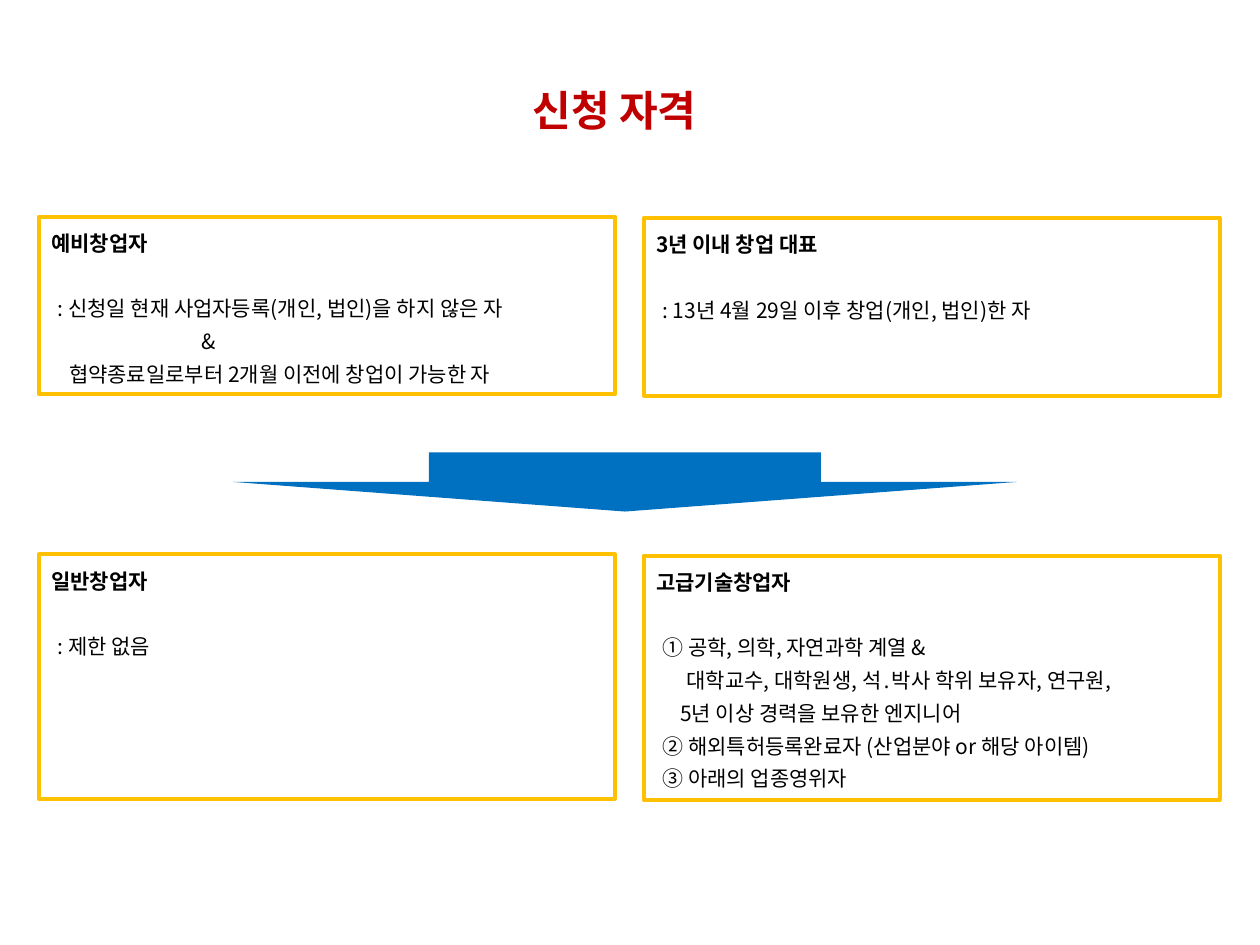
from dataclasses import dataclass

from pptx import Presentation
from pptx.dml.color import RGBColor
from pptx.enum.shapes import MSO_SHAPE
from pptx.enum.text import MSO_ANCHOR, PP_ALIGN
from pptx.oxml.ns import qn
from pptx.util import Inches, Pt

RECTANGLE = MSO_SHAPE.RECTANGLE
DOWN_ARROW = MSO_SHAPE.DOWN_ARROW
TOP, MIDDLE = MSO_ANCHOR.TOP, MSO_ANCHOR.MIDDLE
LEFT, CENTER = PP_ALIGN.LEFT, PP_ALIGN.CENTER

FONT = "Noto Sans CJK KR"
RED, AMBER, BLUE, BLACK = "C00000", "FFC000", "0070C0", "000000"
LINE_PITCH = Pt(18.7)
TITLE_FORMAT = {"name": FONT, "size": Pt(24), "bold": True}
HEADING_FORMAT = {"name": FONT, "size": Pt(12), "bold": True}
BODY_FORMAT = {**HEADING_FORMAT, "bold": False}

# Card grid: the right column sits slightly lower than the left one
CARD_WIDTH = 4.57
COLUMN_LEFT = 0.31
COLUMN_STEP = 4.8
COLUMN_DROP = 0.01
ROW_TOPS = (1.72, 4.4)
ROW_HEIGHTS = (1.41, 1.94)


@dataclass(frozen=True)
class Line:
    text: str
    indent: float = 0.05


@dataclass(frozen=True)
class Card:
    row: int
    column: int
    heading: str
    lines: tuple[Line, ...]


CARDS = (
    Card(0, 0, "예비창업자", (
        Line(": 신청일 현재 사업자등록(개인, 법인)을 하지 않은 자"),
        Line("&", 1.19),
        Line("협약종료일로부터 2개월 이전에 창업이 가능한 자", 0.14),
    )),
    Card(0, 1, "3년 이내 창업 대표", (
        Line(": 13년 4월 29일 이후 창업(개인, 법인)한 자"),
    )),
    Card(1, 0, "일반창업자", (Line(": 제한 없음"),)),
    Card(1, 1, "고급기술창업자", (
        Line("① 공학, 의학, 자연과학 계열 &"),
        Line("대학교수, 대학원생, 석․박사 학위 보유자, 연구원,", 0.24),
        Line("5년 이상 경력을 보유한 엔지니어", 0.19),
        Line("② 해외특허등록완료자 (산업분야 or 해당 아이템)"),
        Line("③ 아래의 업종영위자"),
    )),
)


def rgb(color: str) -> RGBColor:
    return RGBColor.from_string(color)


def write(paragraph, text: str, font_format: dict, color: str) -> None:
    run = paragraph.add_run()
    run.text = text
    for attribute, value in font_format.items():
        setattr(run.font, attribute, value)
    run.font.color.rgb = rgb(color)
    # Hangul takes the East Asian typeface
    east_asian = run.font._element.makeelement(qn("a:ea"), {"typeface": FONT})
    run.font._element.find(qn("a:latin")).addnext(east_asian)


def add_title(slide, text: str) -> None:
    title = slide.shapes.title
    title.left, title.top = Inches(2.24), Inches(0.62)
    title.width, title.height = Inches(5.35), Inches(0.5)
    title.text_frame.vertical_anchor = MIDDLE
    paragraph = title.text_frame.paragraphs[0]
    paragraph.alignment = CENTER
    write(paragraph, text, TITLE_FORMAT, RED)


def add_card(slide, card: Card) -> None:
    box = slide.shapes.add_shape(
        RECTANGLE,
        Inches(COLUMN_LEFT + card.column * COLUMN_STEP),
        Inches(ROW_TOPS[card.row] + card.column * COLUMN_DROP),
        Inches(CARD_WIDTH), Inches(ROW_HEIGHTS[card.row]))
    box.shadow.inherit = False
    box.fill.background()
    box.line.color.rgb = rgb(AMBER)
    box.line.width = Pt(2.25)

    frame = box.text_frame
    frame.word_wrap = True
    frame.vertical_anchor = TOP
    heading = frame.paragraphs[0]
    heading.alignment = LEFT
    heading.line_spacing = LINE_PITCH
    write(heading, card.heading, HEADING_FORMAT, BLACK)

    for index, line in enumerate(card.lines):
        paragraph = frame.add_paragraph()
        paragraph.alignment = LEFT
        paragraph.line_spacing = LINE_PITCH
        paragraph.space_before = LINE_PITCH if index == 0 else Pt(0)
        paragraph._p.get_or_add_pPr().set("marL", str(Inches(line.indent)))
        write(paragraph, line.text, BODY_FORMAT, BLACK)


def add_down_arrow(slide) -> None:
    arrow = slide.shapes.add_shape(
        DOWN_ARROW, Inches(1.85), Inches(3.59), Inches(6.22), Inches(0.47))
    arrow.shadow.inherit = False
    arrow.fill.solid()
    arrow.fill.fore_color.rgb = rgb(BLUE)
    arrow.line.fill.background()


def main() -> None:
    presentation = Presentation()
    presentation.slide_width = Inches(10)
    presentation.slide_height = Inches(7.5)
    slide = presentation.slides.add_slide(presentation.slide_layouts[5])

    add_title(slide, "신청 자격 ")
    # Applicant types above the arrow, eligible fields below it
    for card in CARDS[:2]:
        add_card(slide, card)
    add_down_arrow(slide)
    for card in CARDS[2:]:
        add_card(slide, card)

    presentation.save("out.pptx")


if __name__ == "__main__":
    main()
